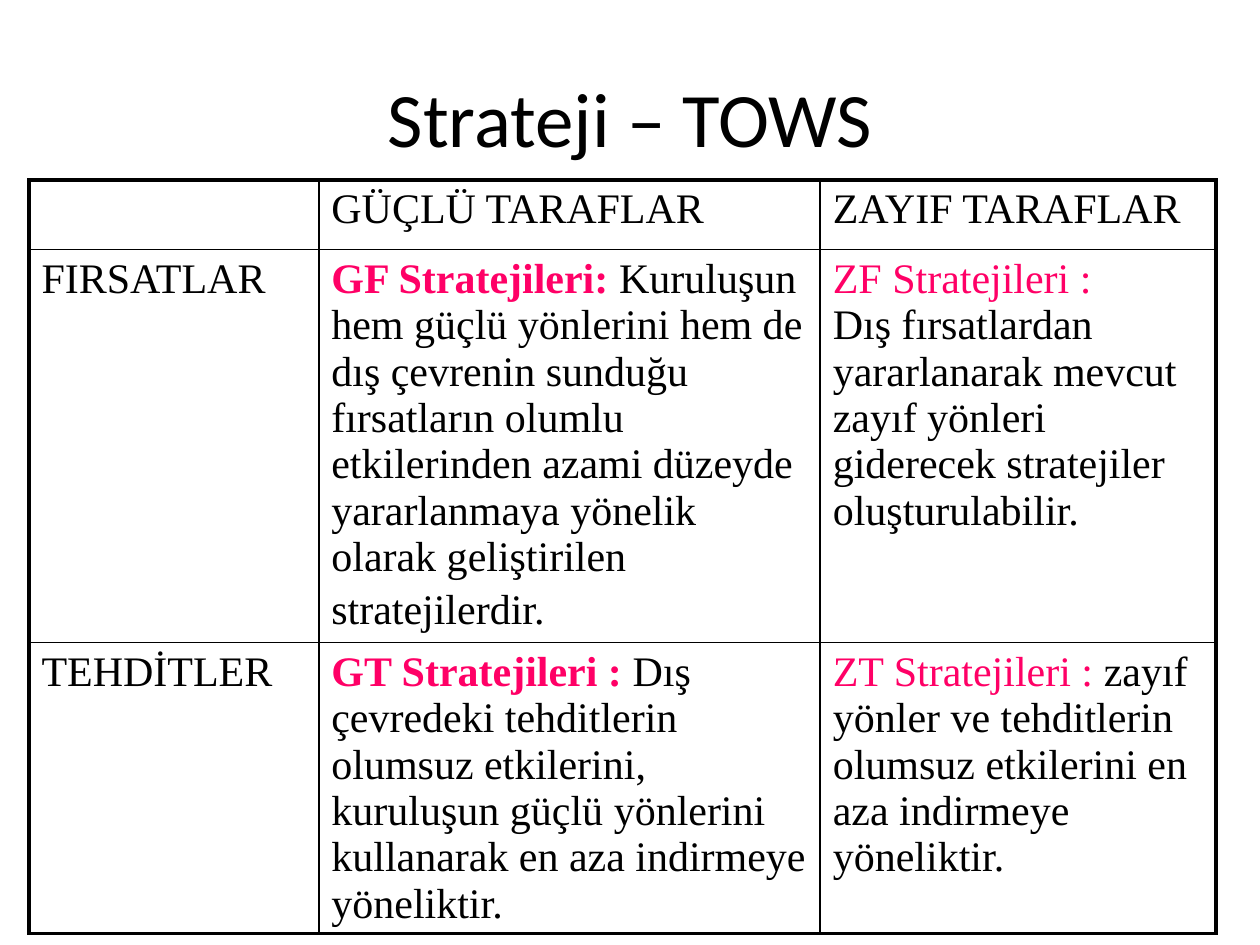
"""Builds the TOWS strategy matrix slide."""
from lxml.etree import SubElement
from pptx import Presentation
from pptx.dml.color import RGBColor
from pptx.enum.text import MSO_ANCHOR, PP_ALIGN
from pptx.oxml.ns import qn
from pptx.util import Inches, Pt

COLORS = {"text": "000000", "accent": "FF0066", "border": "000000"}
COLUMN_WIDTHS = [2.3, 3.98, 3.14]
ROW_HEIGHTS = [0.55, 3.12, 1.61]


def plain(text, size=24):
    return text, "text", False, size


def accent(text, bold=False):
    return text, "accent", bold, 24


MATRIX = [
    [[], [[plain("GÜÇLÜ TARAFLAR")]], [[plain("ZAYIF TARAFLAR")]]],
    [
        [[plain("FIRSATLAR")]],
        [[accent("GF Stratejileri: ", bold=True),
          plain("Kuruluşun hem güçlü yönlerini hem de dış çevrenin sunduğu "
                "fırsatların olumlu etkilerinden azami düzeyde yararlanmaya "
                "yönelik olarak geliştirilen stratejilerdir."),
          plain(" ", 28)]],
        [[accent("ZF Stratejileri :")],
         [plain("Dış fırsatlardan yararlanarak mevcut zayıf yönleri "
                "giderecek stratejiler oluşturulabilir.")]],
    ],
    [
        [[plain("TEHDİTLER")]],
        [[accent("GT Stratejileri :", bold=True),
          plain(" Dış çevredeki tehditlerin olumsuz etkilerini, kuruluşun "
                "güçlü yönlerini kullanarak en aza indirmeye yöneliktir.")]],
        [[accent("ZT Stratejileri :"),
          plain(" zayıf yönler ve tehditlerin olumsuz etkilerini en aza "
                "indirmeye yöneliktir.")]],
    ],
]


class SlideBuilder:
    def __init__(self, slide):
        self.slide = slide
        self.title_font = "Calibri"
        self.body_font = "Times New Roman"
        self.outer_border = 2.25
        self.inner_border = 1

    def run(self, paragraph, text, color, bold, size, font):
        run = paragraph.add_run()
        run.text = text
        run.font.name = font
        run.font.size = Pt(size)
        run.font.bold = bold
        run.font.color.rgb = RGBColor.from_string(COLORS[color])

    def title(self, text, left, top, width, height):
        heading = self.slide.shapes.title
        heading.left, heading.top = Inches(left), Inches(top)
        heading.width, heading.height = Inches(width), Inches(height)
        frame = heading.text_frame
        frame.vertical_anchor = MSO_ANCHOR.MIDDLE
        frame.paragraphs[0].alignment = PP_ALIGN.CENTER
        self.run(frame.paragraphs[0], text, "text", False, 44, self.title_font)

    def border(self, cell, side, points):
        line = SubElement(cell._tc.get_or_add_tcPr(), qn(f"a:ln{side}"), w=str(Pt(points)))
        fill = SubElement(line, qn("a:solidFill"))
        SubElement(fill, qn("a:srgbClr"), val=COLORS["border"])

    def cell(self, cell, paragraphs, outer_sides):
        for side in "LRTB":
            self.border(cell, side, self.outer_border if side in outer_sides else self.inner_border)
        cell.fill.background()
        frame = cell.text_frame
        for index, runs in enumerate(paragraphs):
            paragraph = frame.add_paragraph() if index else frame.paragraphs[0]
            for part in runs:
                self.run(paragraph, *part, self.body_font)

    def table(self, rows, left, top, widths, heights):
        matrix = self.slide.shapes.add_table(
            len(heights), len(widths), Inches(left), Inches(top),
            Inches(sum(widths)), Inches(sum(heights))).table
        matrix.first_row = matrix.horz_banding = False
        for column, width in zip(matrix.columns, widths):
            column.width = Inches(width)
        for row, height in zip(matrix.rows, heights):
            row.height = Inches(height)
        for r, row in enumerate(rows):
            for c, paragraphs in enumerate(row):
                edges = {"L": c == 0, "R": c == len(widths) - 1,
                         "T": r == 0, "B": r == len(heights) - 1}
                outer_sides = [side for side, is_outer in edges.items() if is_outer]
                self.cell(matrix.cell(r, c), paragraphs, outer_sides)


def main():
    deck = Presentation()
    deck.slide_width, deck.slide_height = Inches(10), Inches(7.5)
    builder = SlideBuilder(deck.slides.add_slide(deck.slide_layouts[5]))
    builder.title("Strateji – TOWS", 0.5, 0.3, 9, 1.25)
    builder.table(MATRIX, 0.23, 1.43, COLUMN_WIDTHS, ROW_HEIGHTS)
    deck.save("out.pptx")


if __name__ == "__main__":
    main()
